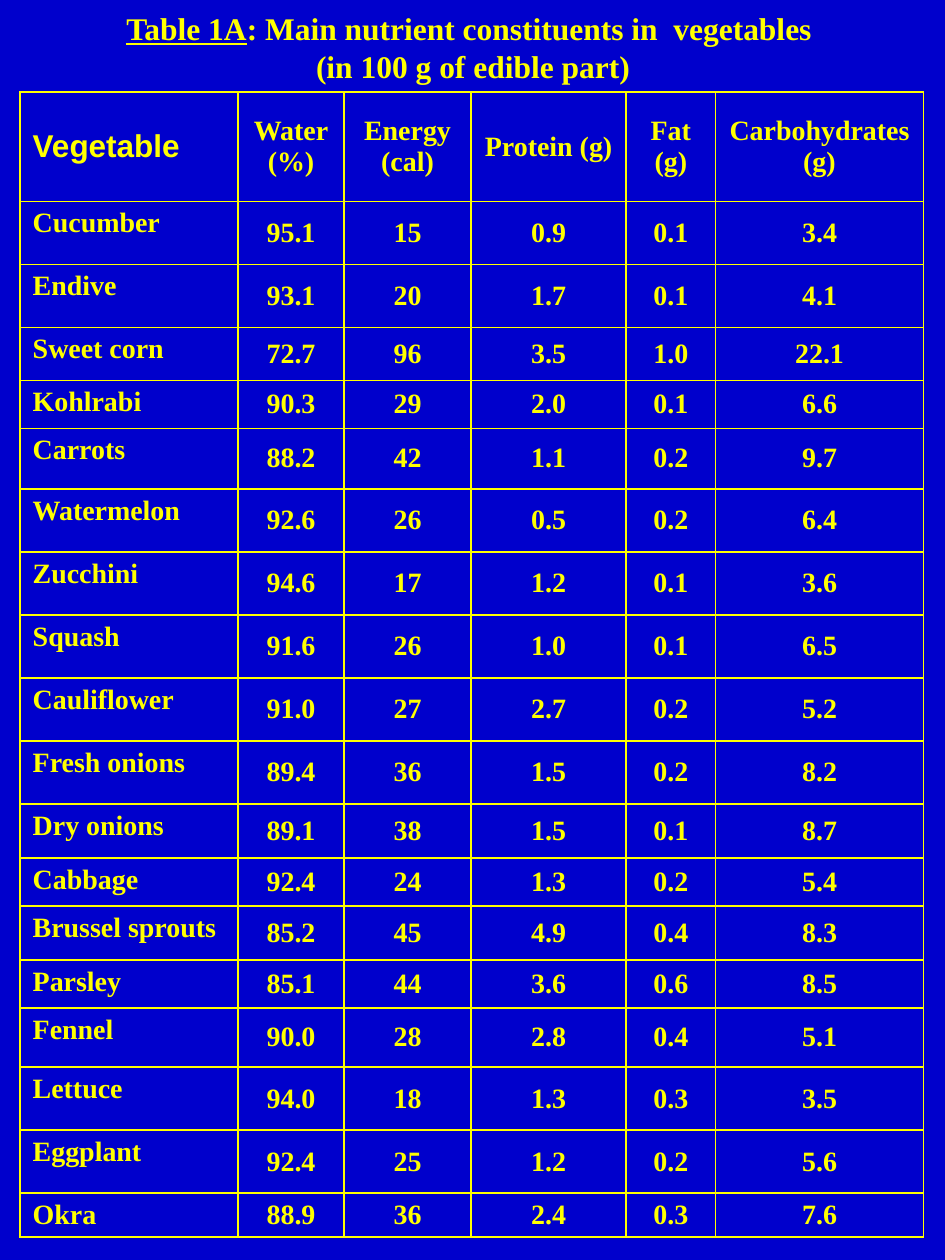
from typing import NamedTuple

import pptx
import pptx.dml.color
import pptx.enum.text
import pptx.oxml.ns
import pptx.util
from lxml import etree

BLUE = pptx.dml.color.RGBColor(0x00, 0x00, 0xCC)
YELLOW = pptx.dml.color.RGBColor(0xFF, 0xFF, 0x00)
SERIF = "Times New Roman"
SANS = "Arial"
CENTER = pptx.enum.text.PP_ALIGN.CENTER
LEFT = pptx.enum.text.PP_ALIGN.LEFT
MIDDLE = pptx.enum.text.MSO_ANCHOR.MIDDLE
TOP = pptx.enum.text.MSO_ANCHOR.TOP

SLIDE_WIDTH = pptx.util.Inches(7.5)
SLIDE_HEIGHT = pptx.util.Inches(10)
GRID_COLUMNS = 750
GRID_ROWS = 1000
COLUMN_SPANS = (173, 84, 101, 123, 71, 165)
HEADER_SPAN = 87
HEADINGS = ("Vegetable", "Water\n(%)", "Energy (cal)", "Protein (g)", "Fat\n(g)", "Carbohydrates (g)")


class Vegetable(NamedTuple):
    row_span: int
    name: str
    water: str
    energy: str
    protein: str
    fat: str
    carbohydrates: str


VEGETABLES = (
    Vegetable(50, "Cucumber", "95.1", "15", "0.9", "0.1", "3.4"),
    Vegetable(50, "Endive", "93.1", "20", "1.7", "0.1", "4.1"),
    Vegetable(42, "Sweet corn", "72.7", "96", "3.5", "1.0", "22.1"),
    Vegetable(38, "Kohlrabi", "90.3", "29", "2.0", "0.1", "6.6"),
    Vegetable(48, "Carrots", "88.2", "42", "1.1", "0.2", "9.7"),
    Vegetable(50, "Watermelon", "92.6", "26", "0.5", "0.2", "6.4"),
    Vegetable(50, "Zucchini", "94.6", "17", "1.2", "0.1", "3.6"),
    Vegetable(50, "Squash", "91.6", "26", "1.0", "0.1", "6.5"),
    Vegetable(50, "Cauliflower", "91.0", "27", "2.7", "0.2", "5.2"),
    Vegetable(50, "Fresh onions", "89.4", "36", "1.5", "0.2", "8.2"),
    Vegetable(43, "Dry onions", "89.1", "38", "1.5", "0.1", "8.7"),
    Vegetable(38, "Cabbage", "92.4", "24", "1.3", "0.2", "5.4"),
    Vegetable(43, "Brussel sprouts", "85.2", "45", "4.9", "0.4", "8.3"),
    Vegetable(38, "Parsley", "85.1", "44", "3.6", "0.6", "8.5"),
    Vegetable(47, "Fennel", "90.0", "28", "2.8", "0.4", "5.1"),
    Vegetable(50, "Lettuce", "94.0", "18", "1.3", "0.3", "3.5"),
    Vegetable(50, "Eggplant", "92.4", "25", "1.2", "0.2", "5.6"),
    Vegetable(35, "Okra", "88.9", "36", "2.4", "0.3", "7.6"),
)


def across(columns: int) -> int:
    return SLIDE_WIDTH * columns // GRID_COLUMNS


def down(rows: int) -> int:
    return SLIDE_HEIGHT * rows // GRID_ROWS


def style_paragraph(para, size: int, align, face: str = SERIF) -> None:
    para.alignment = align
    para.font.name = face
    para.font.size = pptx.util.Pt(size)
    para.font.bold = True
    para.font.color.rgb = YELLOW


def add_borders(cell) -> None:
    properties = cell._tc.get_or_add_tcPr()
    for side in ("lnL", "lnR", "lnT", "lnB"):
        line = etree.SubElement(properties, pptx.oxml.ns.qn(f"a:{side}"), w=str(pptx.util.Pt(1)))
        fill = etree.SubElement(line, pptx.oxml.ns.qn("a:solidFill"))
        etree.SubElement(fill, pptx.oxml.ns.qn("a:srgbClr"), val=str(YELLOW))


def fill_cell(cell, text: str, is_name: bool, is_heading: bool) -> None:
    add_borders(cell)
    cell.fill.background()
    cell.text = text
    cell.vertical_anchor = TOP if is_name and not is_heading else MIDDLE
    for para in cell.text_frame.paragraphs:
        if is_name and is_heading:
            style_paragraph(para, 18, LEFT, SANS)
        else:
            style_paragraph(para, 16, LEFT if is_name else CENTER)


def write_title(title) -> None:
    title.left, title.top = across(21), down(12)
    title.width, title.height = across(709), down(50)
    frame = title.text_frame
    frame.auto_size = pptx.enum.text.MSO_AUTO_SIZE.NONE
    frame.vertical_anchor = MIDDLE
    para = frame.paragraphs[0]
    style_paragraph(para, 18, CENTER)
    label = para.add_run()
    label.text = "Table 1A"
    label.font.underline = True
    para.add_run().text = ": Main nutrient constituents in  vegetables "
    para.add_line_break()
    para.add_run().text = "(in 100 g of edible part)"


def add_nutrient_table(page) -> None:
    row_spans = [HEADER_SPAN] + [vegetable.row_span for vegetable in VEGETABLES]
    lines = [HEADINGS] + [vegetable[1:] for vegetable in VEGETABLES]
    table = page.shapes.add_table(
        len(lines), len(HEADINGS), across(16), down(73), across(sum(COLUMN_SPANS)), down(sum(row_spans))
    ).table
    table.first_row = False
    table.horz_banding = False
    for column, span in zip(table.columns, COLUMN_SPANS):
        column.width = across(span)
    for row, span in zip(table.rows, row_spans):
        row.height = down(span)
    for row_index, texts in enumerate(lines):
        for column_index, text in enumerate(texts):
            fill_cell(table.cell(row_index, column_index), text, column_index == 0, row_index == 0)


def main() -> None:
    deck = pptx.Presentation()
    deck.slide_width = SLIDE_WIDTH
    deck.slide_height = SLIDE_HEIGHT
    page = deck.slides.add_slide(deck.slide_layouts.get_by_name("Title Only"))
    page.background.fill.solid()
    page.background.fill.fore_color.rgb = BLUE
    write_title(page.shapes.title)
    add_nutrient_table(page)
    deck.save("out.pptx")


if __name__ == "__main__":
    main()
